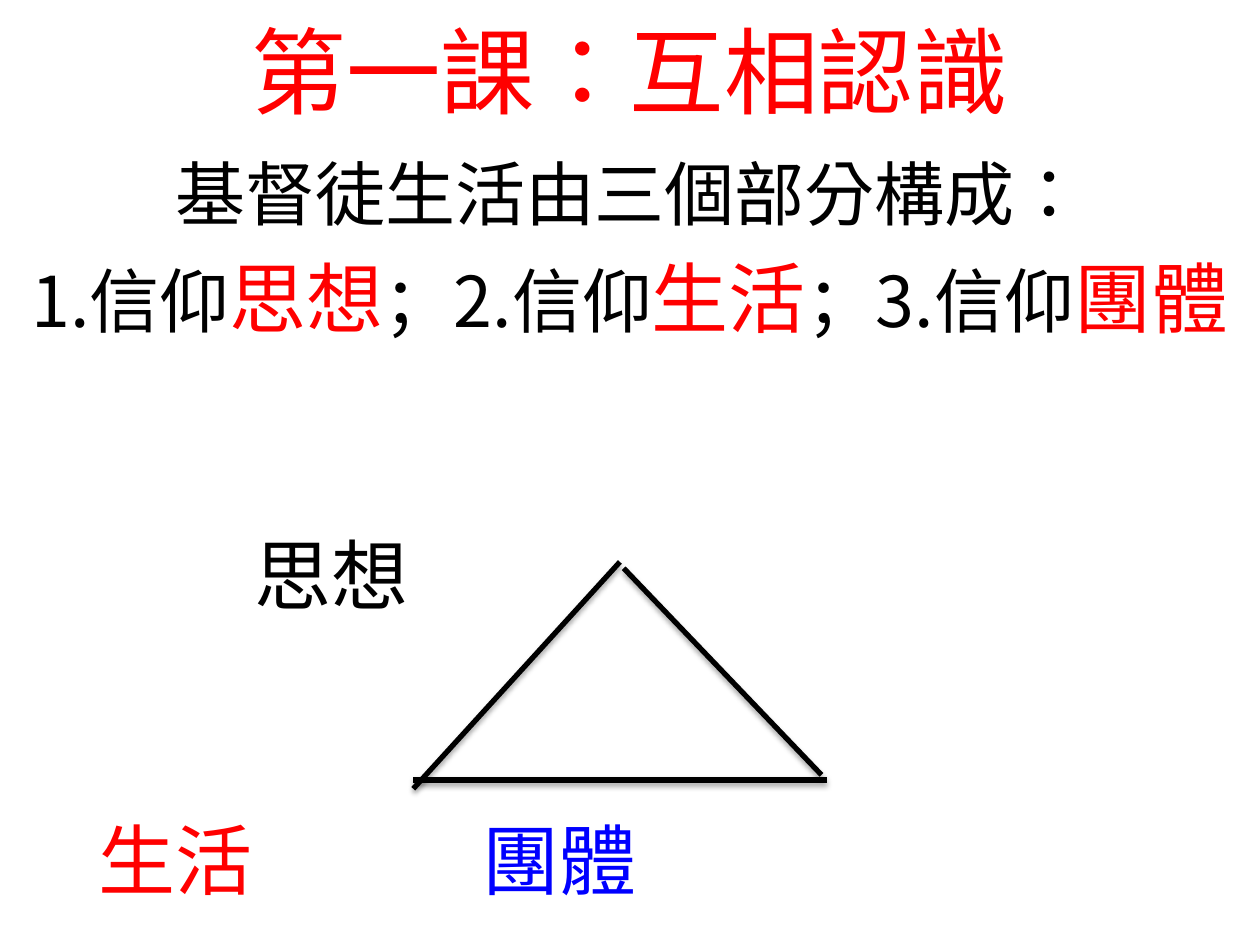
from lxml import etree
from pptx import Presentation
from pptx.dml.color import RGBColor
from pptx.enum.lang import MSO_LANGUAGE_ID as Lang
from pptx.enum.shapes import MSO_CONNECTOR as Connector
from pptx.enum.text import PP_ALIGN as Align
from pptx.oxml import parse_xml
from pptx.oxml.ns import nsdecls, qn
from pptx.util import Inches, Pt

COLORS = {"black": "000000", "red": "FF0000", "blue": "0000FF"}
FONT = "Noto Sans CJK SC"
LINE_HEIGHT = 1.2
LINE_SHADOW = (
    f'<a:effectLst {nsdecls("a")}>'
    f'<a:outerShdw blurRad="{Pt(3.1)}" dist="{Pt(1.8)}" dir="5400000" rotWithShape="0">'
    '<a:srgbClr val="000000"><a:alpha val="35000"/></a:srgbClr>'
    '</a:outerShdw></a:effectLst>'
)


class LessonSlide:
    """The slide of one lesson, with its text and line styles."""

    def __init__(self, slide):
        self.slide = slide

    def text_frame(self, left, top, width, height):
        box = self.slide.shapes.add_textbox(
            Inches(left), Inches(top), Inches(width), Inches(height))
        frame = box.text_frame
        frame.word_wrap = True
        frame.margin_left = frame.margin_right = Inches(0)
        frame.margin_top = frame.margin_bottom = Inches(0)
        return frame

    def fill_paragraph(self, paragraph, pieces, align=Align.CENTER, before=0,
                       language=Lang.TRADITIONAL_CHINESE):
        """Fill a paragraph with (text, size, color) pieces."""
        paragraph.alignment = align
        paragraph.space_before = Pt(before)
        paragraph.line_spacing = Pt(LINE_HEIGHT * max(size for _, size, _ in pieces))
        for text, size, color in pieces:
            run = paragraph.add_run()
            run.text = text
            font = run.font
            font.name = FONT
            font.size = Pt(size)
            font.language_id = language
            font.color.rgb = RGBColor.from_string(COLORS[color])
            latin = run._r.rPr.find(qn("a:latin"))
            latin.addnext(etree.Element(qn("a:ea"), typeface=FONT))

    def label(self, text, left, top, color):
        frame = self.text_frame(left, top, 1.5, 0.75)
        self.fill_paragraph(frame.paragraphs[0], [(text, 44, color)], Align.LEFT)

    def side(self, start, end):
        """Draw one shadowed side of the triangle."""
        line = self.slide.shapes.add_connector(
            Connector.STRAIGHT, *(Inches(value) for value in start + end))
        line.line.width = Pt(3)
        line.line.color.rgb = RGBColor.from_string(COLORS["black"])
        line._element.spPr.append(parse_xml(LINE_SHADOW))


def main():
    deck = Presentation()
    deck.slide_width, deck.slide_height = Inches(10), Inches(7.5)
    lesson = LessonSlide(deck.slides.add_slide(deck.slide_layouts[6]))

    heading = lesson.text_frame(0.1, 0.1, 9.8, 3.3)
    lesson.fill_paragraph(heading.paragraphs[0], [("第一課：互相認識", 54, "red")])
    lesson.fill_paragraph(heading.add_paragraph(),
                          [("基督徒生活由三個部分構成：", 40, "black")], before=14)
    lesson.fill_paragraph(heading.add_paragraph(), [
        ("1.信仰", 40, "black"), ("思想", 44, "red"),
        ("；2.信仰", 40, "black"), ("生活", 44, "red"),
        ("；3.信仰", 40, "black"), ("團體", 44, "red"),
    ], before=9, language=Lang.SIMPLIFIED_CHINESE)

    for text, left, top, color in [
        ("思想", 2.02, 4.19, "black"),
        ("生活", 0.78, 6.45, "red"),
        ("團體", 3.83, 6.45, "blue"),
    ]:
        lesson.label(text, left, top, color)

    for start, end in [
        ((4.92, 4.46), (3.28, 6.26)),
        ((4.95, 4.51), (6.52, 6.15)),
        ((3.28, 6.19), (6.56, 6.19)),
    ]:
        lesson.side(start, end)

    deck.save("out.pptx")


if __name__ == "__main__":
    main()
